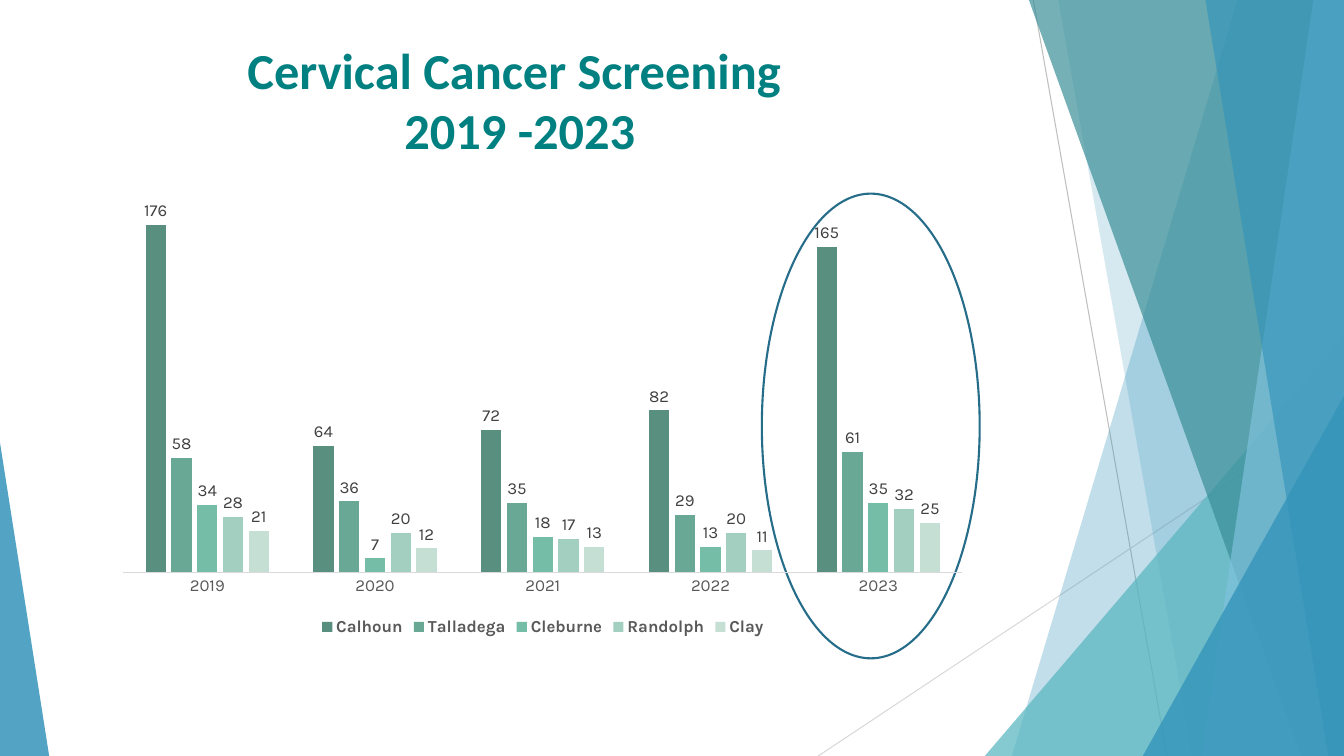
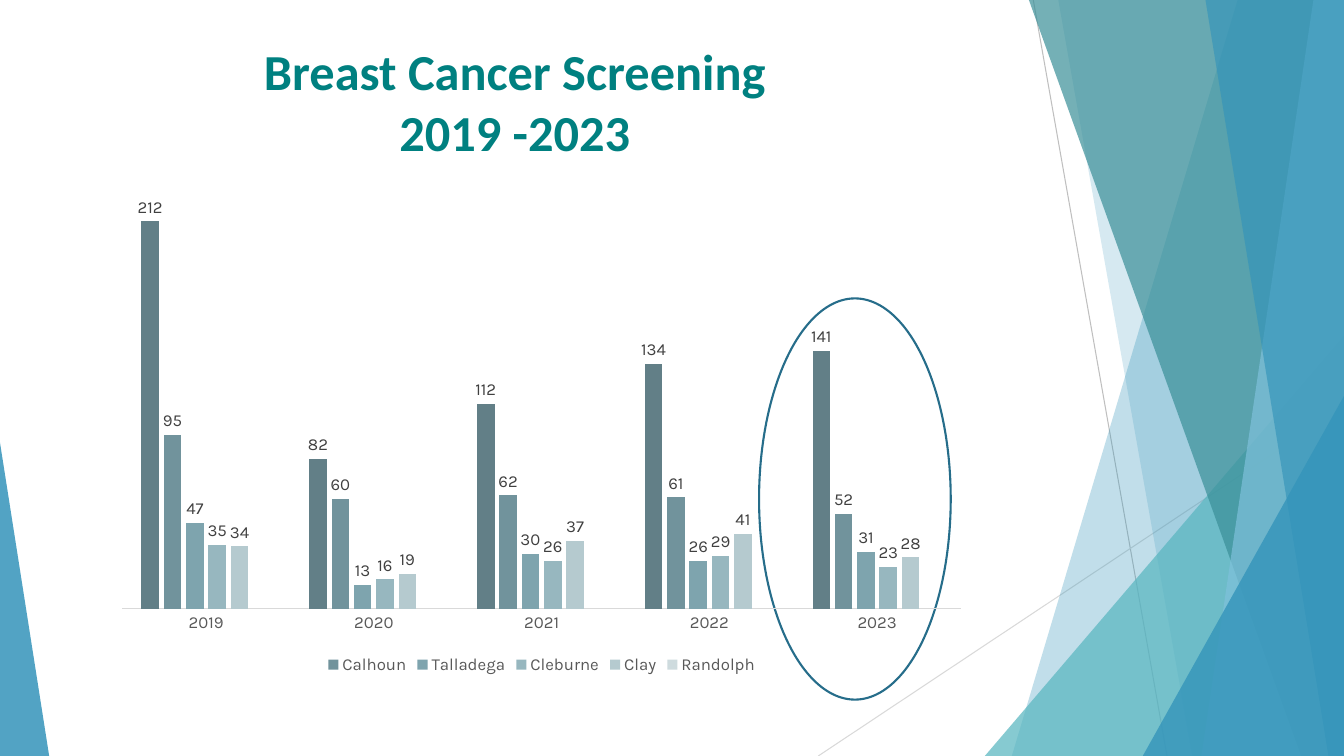
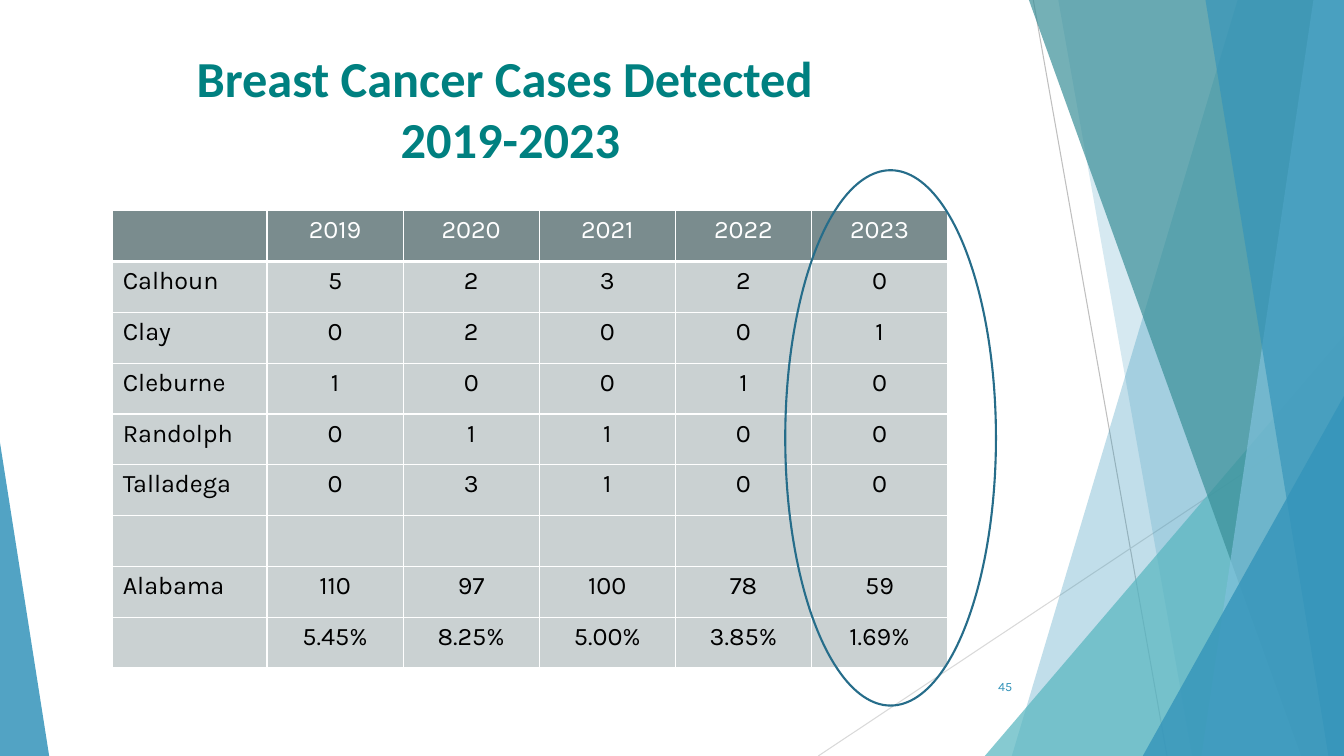
import lxml.etree
import pptx
import pptx.chart.data
import pptx.dml.color
import pptx.enum.chart
import pptx.enum.shapes
import pptx.enum.text
import pptx.oxml.ns
import pptx.util

Cm = pptx.util.Cm
Pt = pptx.util.Pt
qn = pptx.oxml.ns.qn
SHAPES = pptx.enum.shapes.MSO_SHAPE
ALIGN = pptx.enum.text.PP_ALIGN
ANCHOR = pptx.enum.text.MSO_ANCHOR

WIDTH, HEIGHT = 33.87, 19.05
YEARS = ["2019", "2020", "2021", "2022", "2023"]


def rgb(value):
    return pptx.dml.color.RGBColor.from_string(value)


def box(left, top, width, height):
    return Cm(left), Cm(top), Cm(width), Cm(height)


class Deck:
    heading_font = "Calibri"
    body_font = "Karla"
    teal = "008080"
    blue = "3494BA"
    ring_blue = "266D8A"
    axis_grey = "D9D9D9"
    text_grey = "595959"
    label_grey = "404040"
    header_fill = "7A8C8E"
    cell_fill = "CAD1D2"
    white = "FFFFFF"
    black = "000000"

    def __init__(self):
        self.presentation = pptx.Presentation()
        self.presentation.slide_width = Cm(WIDTH)
        self.presentation.slide_height = Cm(HEIGHT)
        self.layout = self.presentation.slide_layouts[5]
        self.slide = None

    def new_slide(self):
        self.slide = self.presentation.slides.add_slide(self.layout)

    def style(self, font, size, color, bold=False, name=None):
        font.name = name or self.body_font
        font.size = Pt(size)
        font.bold = bold
        font.color.rgb = rgb(color)

    def tint(self, shape, color, opacity):
        shape.shadow.inherit = False
        shape.line.fill.background()
        shape.fill.solid()
        shape.fill.fore_color.rgb = rgb(color)
        fill_color = shape.element.spPr.find(".//" + qn("a:srgbClr"))
        lxml.etree.SubElement(fill_color, qn("a:alpha"), val=str(opacity * 1000))

    def ray(self, shapes, start, end, color):
        ray = shapes.add_connector(
            pptx.enum.shapes.MSO_CONNECTOR.STRAIGHT,
            *[Cm(value) for value in start + end])
        ray.line.color.rgb = rgb(color)
        ray.line.width = Pt(0.75)
        lxml.etree.SubElement(ray.element.spPr, qn("a:effectLst"))

    def band(self, shapes, top_x, bottom_x, color, opacity):
        outline = shapes.build_freeform(Cm(top_x), 0)
        corners = [(WIDTH, 0), (WIDTH, HEIGHT), (bottom_x, HEIGHT)]
        outline.add_line_segments([(Cm(x), Cm(y)) for x, y in corners])
        self.tint(outline.convert_to_shape(), color, opacity)

    def wedge(self, shapes, width, height, color, opacity, on_left=False):
        left = 0 if on_left else WIDTH - width
        wedge = shapes.add_shape(SHAPES.ISOSCELES_TRIANGLE,
                                 *box(left, HEIGHT - height, width, height))
        wedge.adjustments[0] = 0 if on_left else 1
        self.tint(wedge, color, opacity)

    def backdrop(self):
        group = self.slide.shapes.add_group_shape()
        shapes = group.shapes
        self.ray(shapes, (26.04, 0), (29.41, HEIGHT), "BFBFBF")
        self.ray(shapes, (WIDTH, 10.24), (20.62, HEIGHT), self.axis_grey)
        self.band(shapes, 31.19, 25.5, self.blue, 30)
        self.band(shapes, 26.67, 30.05, self.blue, 20)
        self.wedge(shapes, 9.05, 10.59, "58B6C0", 72)
        self.band(shapes, 25.93, 32.79, "3A8F98", 70)
        self.band(shapes, 33.1, 30.28, "7FC1DB", 70)
        self.band(shapes, 30.38, 33.48, self.blue, 65)
        self.wedge(shapes, 5.07, 9.07, self.blue, 80)
        self.wedge(shapes, 1.24, 7.9, self.blue, 85, on_left=True)
        for properties in group.element.iter(qn("p:cNvPr")):
            properties.set("id", str(int(properties.get("id")) + 100))
        self.layout.shapes.element.insert(2, group.element)

    def title(self, text, place):
        title = self.slide.shapes.title
        title.left, title.top, title.width, title.height = box(*place)
        frame = title.text_frame
        frame.text = text
        frame.vertical_anchor = ANCHOR.MIDDLE
        frame.paragraphs[0].alignment = ALIGN.CENTER
        for run in frame.paragraphs[0].runs:
            self.style(run.font, 36, self.teal, True, self.heading_font)

    def ring(self, place):
        ring = self.slide.shapes.add_shape(SHAPES.OVAL, *box(*place))
        ring.shadow.inherit = False
        ring.fill.background()
        ring.line.color.rgb = rgb(self.ring_blue)
        ring.line.width = Pt(1.5)

    def chart(self, place, counties, number_format="General",
              bold_legend=False, hidden_entry=None):
        data = pptx.chart.data.CategoryChartData(number_format=number_format)
        data.categories = YEARS
        for county, color, counts in counties:
            data.add_series(county, counts)
        chart = self.slide.shapes.add_chart(
            pptx.enum.chart.XL_CHART_TYPE.COLUMN_CLUSTERED, *box(*place), data).chart
        chart.has_title = False
        self.style(chart.font, 10, self.black)

        years = chart.category_axis
        years.major_tick_mark = pptx.enum.chart.XL_TICK_MARK.NONE
        years.format.line.color.rgb = rgb(self.axis_grey)
        years.format.line.width = Pt(0.75)
        self.style(years.tick_labels.font, 12, self.text_grey)
        chart.value_axis.has_major_gridlines = False
        chart.value_axis.minimum_scale = 0
        chart.value_axis.visible = False

        chart.has_legend = True
        legend = chart.legend
        legend.position = pptx.enum.chart.XL_LEGEND_POSITION.BOTTOM
        legend.include_in_layout = False
        self.style(legend.font, 12, self.text_grey, bold_legend)
        if hidden_entry is not None:
            entry = lxml.etree.Element(qn("c:legendEntry"))
            lxml.etree.SubElement(entry, qn("c:idx"), val=str(hidden_entry))
            lxml.etree.SubElement(entry, qn("c:delete"), val="1")
            chart.element.find(".//" + qn("c:legendPos")).addnext(entry)

        plot = chart.plots[0]
        plot.vary_by_categories = False
        plot.gap_width = 219
        plot.overlap = -27
        for bars, (county, color, counts) in zip(plot.series, counties):
            bars.format.fill.solid()
            bars.format.fill.fore_color.rgb = rgb(color)
            labels = bars.data_labels
            labels.show_value = True
            labels.number_format = number_format
            labels.number_format_is_linked = False
            labels.position = pptx.enum.chart.XL_LABEL_POSITION.OUTSIDE_END
            self.style(labels.font, 12, self.label_grey)

    def borders(self, cell_properties, is_header):
        for index, side in enumerate(["lnL", "lnR", "lnT", "lnB"]):
            width = 3 if is_header and side == "lnB" else 1
            line = lxml.etree.Element(qn("a:" + side), w=str(int(Pt(width))))
            fill = lxml.etree.SubElement(line, qn("a:solidFill"))
            lxml.etree.SubElement(fill, qn("a:srgbClr"), val=self.white)
            cell_properties.insert(index, line)

    def table(self, left, top, column_widths, row_height, rows):
        holder = self.slide.shapes.add_table(
            len(rows), len(column_widths),
            *box(left, top, sum(column_widths), row_height * len(rows)))
        table = holder.table
        for column, width in zip(table.columns, column_widths):
            column.width = Cm(width)
        for row_index, row in enumerate(rows):
            is_header = row_index == 0
            table.rows[row_index].height = Cm(row_height)
            for column_index, text in enumerate(row):
                cell = table.cell(row_index, column_index)
                cell.fill.solid()
                cell.fill.fore_color.rgb = rgb(
                    self.header_fill if is_header else self.cell_fill)
                cell.text_frame.text = text
                paragraph = cell.text_frame.paragraphs[0]
                paragraph.alignment = ALIGN.CENTER if column_index else ALIGN.LEFT
                for run in paragraph.runs:
                    self.style(run.font, 18, self.white if is_header else self.black)
        for index, properties in enumerate(list(holder.element.iter(qn("a:tcPr")))):
            self.borders(properties, index < len(column_widths))

    def page_number(self, text, place):
        frame = self.slide.shapes.add_textbox(*box(*place)).text_frame
        frame.word_wrap = True
        frame.vertical_anchor = ANCHOR.MIDDLE
        frame.text = text
        frame.paragraphs[0].alignment = ALIGN.RIGHT
        self.style(frame.paragraphs[0].runs[0].font, 9, self.blue)


def main():
    deck = Deck()

    deck.new_slide()
    deck.backdrop()
    deck.title("Cervical Cancer Screening \v2019 -2023", (0, 0.76, 26.21, 3.48))
    deck.ring((19.2, 4.88, 5.49, 11.71))
    deck.chart((2.67, 4.24, 22.02, 11.91), [
        ("Calhoun", "598F7F", [176, 64, 72, 82, 165]),
        ("Talladega", "68A894", [58, 36, 35, 29, 61]),
        ("Cleburne", "75BDA7", [34, 7, 18, 13, 35]),
        ("Randolph", "A3CFC0", [28, 20, 17, 20, 32]),
        ("Clay", "C5DFD5", [21, 12, 13, 11, 25]),
    ], bold_legend=True)

    deck.new_slide()
    deck.title("Breast Cancer Screening\v2019 -2023", (0.2, 0.64, 25.55, 3.81))
    deck.ring((19.13, 7.52, 4.83, 10.11))
    deck.chart((2.64, 3.56, 22.02, 13.54), [
        ("Series 1", "627F87", [212, 82, 112, 134, 141]),
        ("Calhoun", "71939C", [95, 60, 62, 61, 52]),
        ("Talladega", "7EA4AE", [47, 13, 30, 26, 31]),
        ("Cleburne", "97B7BF", [35, 16, 26, 29, 23]),
        ("Clay", "B5CACF", [34, 19, 37, 41, 28]),
        ("Randolph", "CEDBDE", [None] * len(YEARS)),
    ], number_format="#,##0", hidden_entry=0)

    deck.new_slide()
    deck.title("Breast Cancer Cases Detected \v2019-2023", (-0.05, 0.81, 25.83, 3.81))
    deck.page_number("45", (23.85, 16.79, 1.91, 1.02))
    deck.table(2.84, 5.31, [3.89] + [3.43] * len(YEARS), 1.28, [
        [""] + YEARS,
        ["Calhoun", "5", "2", "3", "2", "0"],
        ["Clay", "0", "2", "0", "0", "1"],
        ["Cleburne", "1", "0", "0", "1", "0"],
        ["Randolph", "0", "1", "1", "0", "0"],
        ["Talladega", "0", "3", "1", "0", "0"],
        [""] * (len(YEARS) + 1),
        ["Alabama", "110", "97", "100", "78", "59"],
        ["", "5.45%", "8.25%", "5.00%", "3.85%", "1.69%"],
    ])
    deck.ring((19.79, 4.29, 5.31, 13.49))

    deck.presentation.save("out.pptx")


if __name__ == "__main__":
    main()
